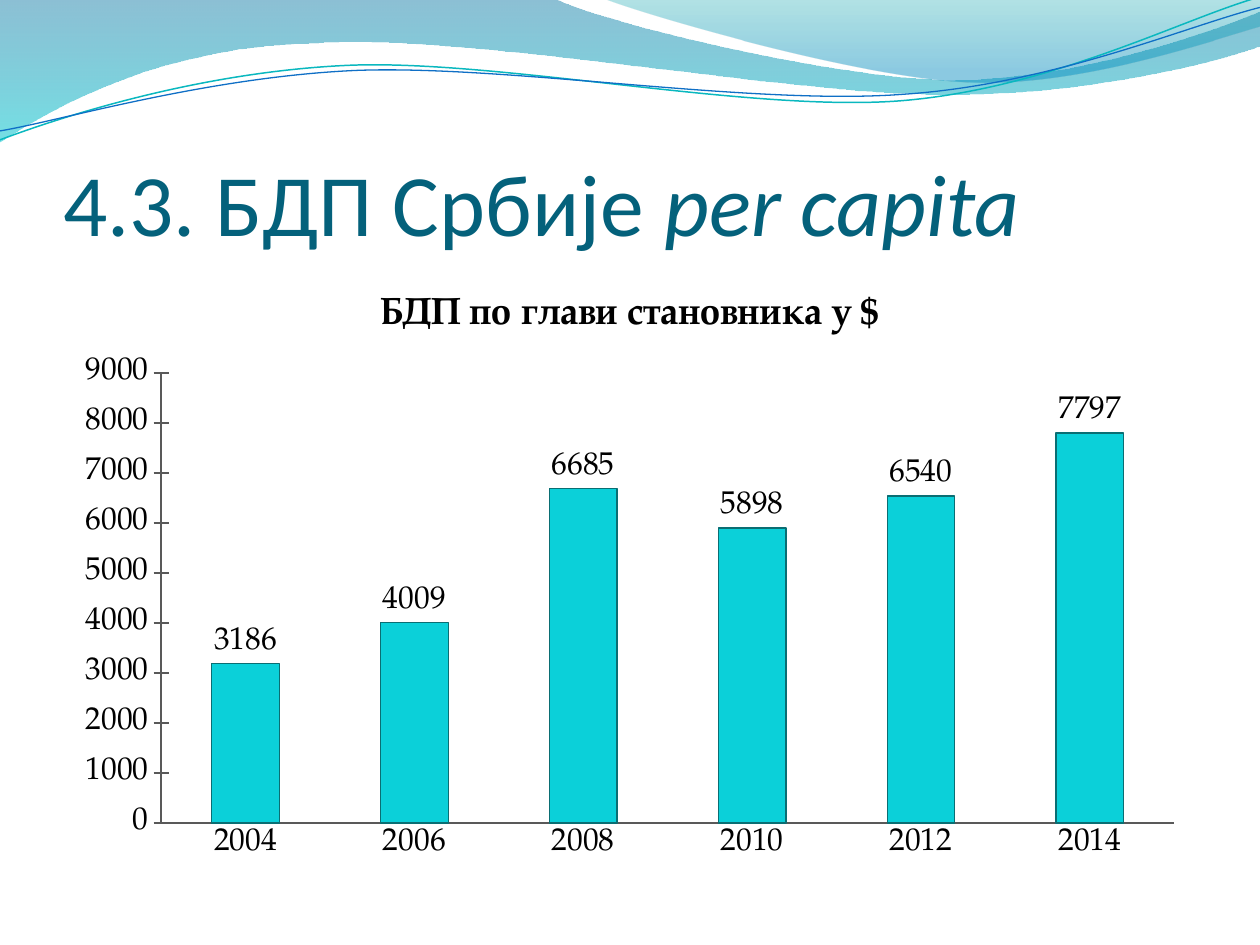
from dataclasses import dataclass

from lxml.etree import SubElement
from pptx import Presentation
from pptx.chart.data import CategoryChartData
from pptx.dml.color import RGBColor as RGB
from pptx.enum.chart import XL_CHART_TYPE as ChartType, XL_LABEL_POSITION as LabelPos, XL_TICK_MARK as Tick
from pptx.enum.text import MSO_ANCHOR as Anchor, MSO_AUTO_SIZE as AutoSize, PP_ALIGN as Align
from pptx.oxml.ns import qn
from pptx.util import Cm, Pt


@dataclass(frozen=True)
class Theme:
    title_font: str = "Calibri"
    chart_font: str = "TeX Gyre Pagella"
    title_size: float = 50
    chart_title_size: float = 21.6
    chart_size: float = 18
    title: str = "04617B"
    text: str = "000000"
    bar: str = "0BD0D9"
    bar_line: str = "0A6E73"
    axis: str = "595959"
    band_top: str = "0074A1"
    band_bottom: str = "00C6CF"
    corner_top: str = "00A1A9"
    corner_bottom: str = "008BBF"
    wave_teal: str = "0AB8BF"
    wave_blue: str = "0F6FC6"


THEME = Theme()
TITLE = [("4.3. БДП Србије ", False), ("per capita", True)]
CHART_TITLE = "БДП по глави становника у $"
GDP = {"2004": 3186, "2006": 4009, "2008": 6685, "2010": 5898, "2012": 6540, "2014": 7797}

TITLE_BOX = (1.27, 1.95, 22.86, 3.18)
CHART_BOX = (1.27, 5.38, 22.86, 12.19)

BANDS = [
    ([(0, 0), (11.18, -0.03), (12.09, 0.43, 16.87, 1.6, 19.25, 1.6),
      (21.67, 1.6, 24.33, 0.66, 25.4, 0.23), (25.43, 0.91),
      (24.97, 1.12, 22.1, 1.93, 18.95, 1.9), (15.8, 1.9, 9.7, 0.71, 6.53, 0.86),
      (3.25, 0.91, 1.17, 2.11, -0.03, 2.87), (0, 0)],
     [(0, THEME.band_top, 45), (1, THEME.band_bottom, 55)]),
    ([(12.17, -0.03), (12.93, 0.28, 17.32, 1.57, 19.53, 1.65),
      (21.74, 1.75, 24.41, 0.81, 25.4, 0.53), (25.4, 0), (12.17, -0.03)],
     [(0, THEME.corner_top, 30), (0.8, THEME.corner_bottom, 45)]),
]
WAVES = [
    ([(-0.05, 2.22), (1.19, 1.82, 4.02, 1.04, 7.05, 1.05),
      (10.05, 1.07, 15.02, 2.37, 18.08, 2.29), (21.13, 2.2, 23.87, 0.91, 25.41, 0.55)],
     THEME.wave_teal, 0.85),
    ([(-0.04, 2.04), (1.16, 1.9, 4.18, 1.15, 7.2, 1.16),
      (10.25, 1.19, 15.13, 2.25, 18.19, 2.16), (21.21, 2.1, 23.93, 1.06, 25.45, 0.75)],
     THEME.wave_blue, 0.75),
]
WAVE_TILT = 357.3


def style_font(font, name, size, color, bold=False, italic=False):
    font.name, font.size, font.bold, font.italic = name, Pt(size), bold, italic
    font.color.rgb = RGB.from_string(color)


def add_text(p, text, **style):
    r = p.add_run()
    r.text = text
    style_font(r.font, **style)


def style_line(line, color, width):
    line.color.rgb = RGB.from_string(color)
    line.width = Pt(width)


def add_outline(s, segments, close):
    start, *rest = segments
    points = [(Cm(seg[i]), Cm(seg[i + 1])) for seg in rest for i in range(0, len(seg), 2)]
    builder = s.shapes.build_freeform(Cm(start[0]), Cm(start[1]))
    builder.add_line_segments(points, close=close)
    sp = builder.convert_to_shape()
    sp.shadow.inherit = False
    steps = iter(list(sp.element.iter(qn("a:lnTo"))))
    for seg in rest:
        step = next(steps)
        if len(seg) == 6:
            step.tag = qn("a:cubicBezTo")
            for extra in (next(steps), next(steps)):
                step.append(extra[0])
                extra.getparent().remove(extra)
    return sp


def add_band(s, segments, stops):
    sp = add_outline(s, segments, True)
    sp.line.fill.background()
    sp.fill.gradient()
    sp.fill.gradient_angle = 270
    for stop, (position, color, _) in zip(sp.fill.gradient_stops, stops):
        stop.position = position
        stop.color.rgb = RGB.from_string(color)
    colors = sp.element.spPr.iter(qn("a:srgbClr"))
    for color, (_, _, opacity) in zip(colors, stops):
        SubElement(color, qn("a:alpha")).set("val", str(opacity * 1000))


def add_wave(s, segments, color, width):
    sp = add_outline(s, segments, False)
    sp.rotation = WAVE_TILT
    sp.fill.background()
    style_line(sp.line, color, width)
    return sp


def set_title(s):
    sp = s.shapes.title
    sp.element.getparent().append(sp.element)
    sp.left, sp.top, sp.width, sp.height = map(Cm, TITLE_BOX)
    tf = sp.text_frame
    tf.word_wrap, tf.auto_size, tf.vertical_anchor = True, AutoSize.NONE, Anchor.BOTTOM
    tf.margin_left = tf.margin_right = tf.margin_bottom = 0
    tf.margin_top = Cm(0.13)
    p = tf.paragraphs[0]
    p.alignment = Align.LEFT
    for text, italic in TITLE:
        add_text(p, text, name=THEME.title_font, size=THEME.title_size,
                 color=THEME.title, italic=italic)


def add_gdp_chart(s):
    data = CategoryChartData()
    data.categories = list(GDP)
    data.add_series(CHART_TITLE, list(GDP.values()))
    chart = s.shapes.add_chart(ChartType.COLUMN_CLUSTERED, *map(Cm, CHART_BOX), data).chart
    style_font(chart.font, THEME.chart_font, THEME.chart_size, THEME.text)
    chart.has_legend = False
    chart.has_title = True
    add_text(chart.chart_title.text_frame.paragraphs[0], CHART_TITLE, name=THEME.chart_font,
             size=THEME.chart_title_size, color=THEME.text, bold=True)
    chart.chart_title.include_in_layout = False

    for axis, tick in ((chart.category_axis, Tick.NONE), (chart.value_axis, Tick.CROSS)):
        axis.has_major_gridlines = False
        axis.major_tick_mark, axis.minor_tick_mark = tick, Tick.NONE
        style_line(axis.format.line, THEME.axis, 0.75)
    scale = chart.value_axis
    scale.minimum_scale, scale.maximum_scale, scale.major_unit = 0, 9000, 1000

    plot = chart.plots[0]
    plot.gap_width, plot.overlap, plot.vary_by_categories = 150, -25, False
    bars = plot.series[0]
    bars.format.fill.solid()
    bars.format.fill.fore_color.rgb = RGB.from_string(THEME.bar)
    style_line(bars.format.line, THEME.bar_line, 0.75)
    labels = bars.data_labels
    labels.show_value = True
    labels.position = LabelPos.OUTSIDE_END
    style_font(labels.font, THEME.chart_font, THEME.chart_size, THEME.text)


def main():
    prs = Presentation()
    prs.slide_width, prs.slide_height = Cm(25.4), Cm(19.05)
    s = prs.slides.add_slide(prs.slide_layouts[5])
    for band in BANDS:
        add_band(s, *band)
    s.shapes.add_group_shape([add_wave(s, *wave) for wave in WAVES])
    set_title(s)
    add_gdp_chart(s)
    prs.save("out.pptx")


if __name__ == "__main__":
    main()
